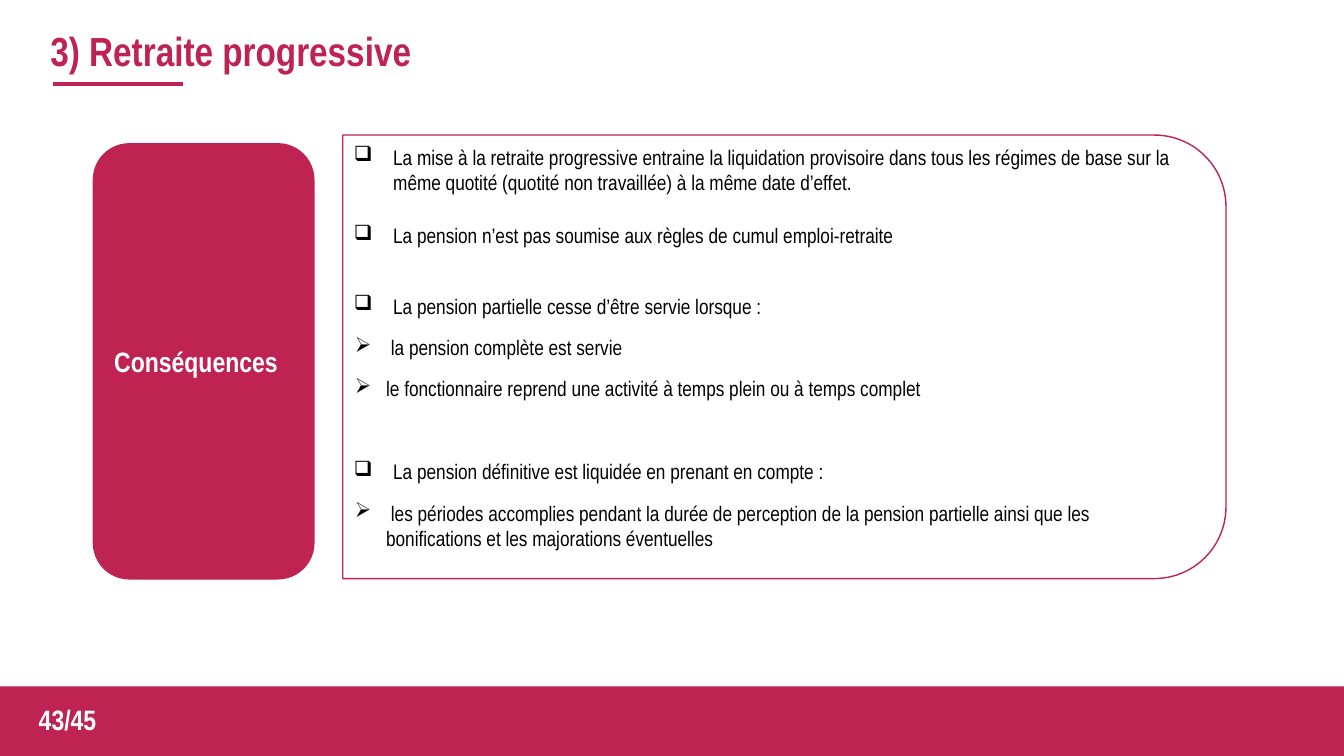
"""Build the slide on the consequences of progressive retirement."""
from math import cos, pi, sin

from lxml.etree import SubElement
from pptx import Presentation
from pptx.dml.color import RGBColor
from pptx.enum.shapes import MSO_CONNECTOR, MSO_SHAPE
from pptx.enum.text import MSO_ANCHOR, PP_ALIGN
from pptx.oxml.ns import qn
from pptx.util import Inches, Pt

TITLE = "3) Retraite progressive"
LABEL = "Conséquences"
PAGE_NUMBER = "43/45"
COLOURS = {"crimson": "BE2352", "white": "FFFFFF", "black": "000000"}
FONT = "Arial Narrow"

BULLETS = {"square": ("❑", 0.4, -0.39), "arrow": ("➢", 0.33, -0.31)}
RULES = [
    ("square", 0, "La mise à la retraite progressive entraine la liquidation provisoire dans tous les "
     "régimes de base sur la même quotité (quotité non travaillée) à la même date d’effet."),
    ("square", 20, "La pension n’est pas soumise aux règles de cumul emploi-retraite"),
]
CASES = [
    ("square", 0, "La pension partielle cesse d’être servie lorsque :"),
    ("arrow", 11.4, " la pension complète est servie"),
    ("arrow", 11.4, "le fonctionnaire reprend une activité à temps plein ou à temps complet"),
    ("square", 41.5, "La pension définitive est liquidée en prenant en compte :"),
    ("arrow", 11.4, " les périodes accomplies pendant la durée de perception de la pension partielle "
     "ainsi que les bonifications et les majorations éventuelles"),
]
PANEL = (3.4, 1.34, 8.76, 4.4)
PANEL_RADIUS = 0.71
ARC_STEPS = 24


def colour(name):
    return RGBColor.from_string(COLOURS[name])


def style(paragraph, size, colour_name, bold=False):
    font = paragraph.font
    font.name, font.size, font.bold = FONT, Pt(size), bold
    font.color.rgb = colour(colour_name)


def set_margins(frame, left=0, top=0, right=0, bottom=0):
    frame.word_wrap = True
    frame.margin_left, frame.margin_top = Inches(left), Inches(top)
    frame.margin_right, frame.margin_bottom = Inches(right), Inches(bottom)


def add_block(page, kind, *place):
    block = page.shapes.add_shape(kind, *map(Inches, place))
    block.shadow.inherit = False
    block.fill.solid()
    block.fill.fore_color.rgb = colour("crimson")
    block.line.fill.background()
    return block


def add_text(frame, text, size, colour_name):
    paragraph = frame.paragraphs[0]
    paragraph.text = text
    paragraph.alignment = PP_ALIGN.CENTER
    style(paragraph, size, colour_name, bold=True)


def add_panel(page):
    left, top, width, height = PANEL
    centre_x = left + width - PANEL_RADIUS
    points = [(left, top)]
    for centre_y, start in ((top + PANEL_RADIUS, -pi / 2), (top + height - PANEL_RADIUS, 0)):
        for step in range(ARC_STEPS + 1):
            angle = start + step * pi / 2 / ARC_STEPS
            points.append((centre_x + PANEL_RADIUS * cos(angle), centre_y + PANEL_RADIUS * sin(angle)))
    points.append((left, top + height))
    corners = [(Inches(x), Inches(y)) for x, y in points]
    builder = page.shapes.build_freeform(*corners[0])
    builder.add_line_segments(corners[1:], close=True)
    panel = builder.convert_to_shape()
    panel.shadow.inherit = False
    panel.fill.background()
    panel.line.color.rgb = colour("crimson")
    panel.line.width = Pt(1)


def add_list(page, items, place, top_margin):
    frame = page.shapes.add_textbox(*map(Inches, place)).text_frame
    set_margins(frame, top=top_margin)
    for index, (kind, space, text) in enumerate(items):
        paragraph = frame.add_paragraph() if index else frame.paragraphs[0]
        paragraph.text = text
        symbol, margin, indent = BULLETS[kind]
        properties = paragraph._p.get_or_add_pPr()
        properties.set("marL", str(Inches(margin)))
        properties.set("indent", str(Inches(indent)))
        SubElement(properties, qn("a:buChar")).set("char", symbol)
        tabs = SubElement(properties, qn("a:tabLst"))
        tab = SubElement(tabs, qn("a:tab"))
        tab.set("pos", str(Inches(0.4)))
        tab.set("algn", "l")
        paragraph.space_before = Pt(space)
        style(paragraph, 15, "black")


def add_title(page):
    title = page.shapes.title
    title.left, title.top, title.width, title.height = map(Inches, (0.5, 0.24, 9.24, 0.5))
    frame = title.text_frame
    set_margins(frame, top=0.01)
    frame.vertical_anchor = MSO_ANCHOR.MIDDLE
    add_text(frame, TITLE, 29, "crimson")
    frame.paragraphs[0].alignment = PP_ALIGN.LEFT
    underline = page.shapes.add_connector(
        MSO_CONNECTOR.STRAIGHT, *map(Inches, (0.53, 0.83, 1.82, 0.83)))
    underline.line.color.rgb = colour("crimson")
    underline.line.width = Pt(3)
    SubElement(underline._element.spPr, qn("a:effectLst"))


def main():
    deck = Presentation()
    deck.slide_width, deck.slide_height = Inches(13.33), Inches(7.5)
    page = deck.slides.add_slide(deck.slide_layouts[5])

    add_block(page, MSO_SHAPE.RECTANGLE, 0, 6.81, 13.33, 0.69)
    add_title(page)
    add_panel(page)
    add_list(page, RULES, (3.5, 1.42, 8.23, 1.05), 0.01)
    add_list(page, CASES, (3.5, 2.75, 8.23, 2.9), 0.16)

    label = add_block(page, MSO_SHAPE.ROUNDED_RECTANGLE, 0.92, 1.42, 2.2, 4.33)
    label.adjustments[0] = 0.165
    set_margins(label.text_frame, right=0.15)
    label.text_frame.vertical_anchor = MSO_ANCHOR.MIDDLE
    add_text(label.text_frame, LABEL, 20, "white")

    number = page.shapes.add_textbox(*map(Inches, (0.17, 6.92, 1, 0.44)))
    set_margins(number.text_frame, 0.1, 0.05, 0.1, 0.05)
    add_text(number.text_frame, PAGE_NUMBER, 20, "white")

    deck.save("out.pptx")


if __name__ == "__main__":
    main()
